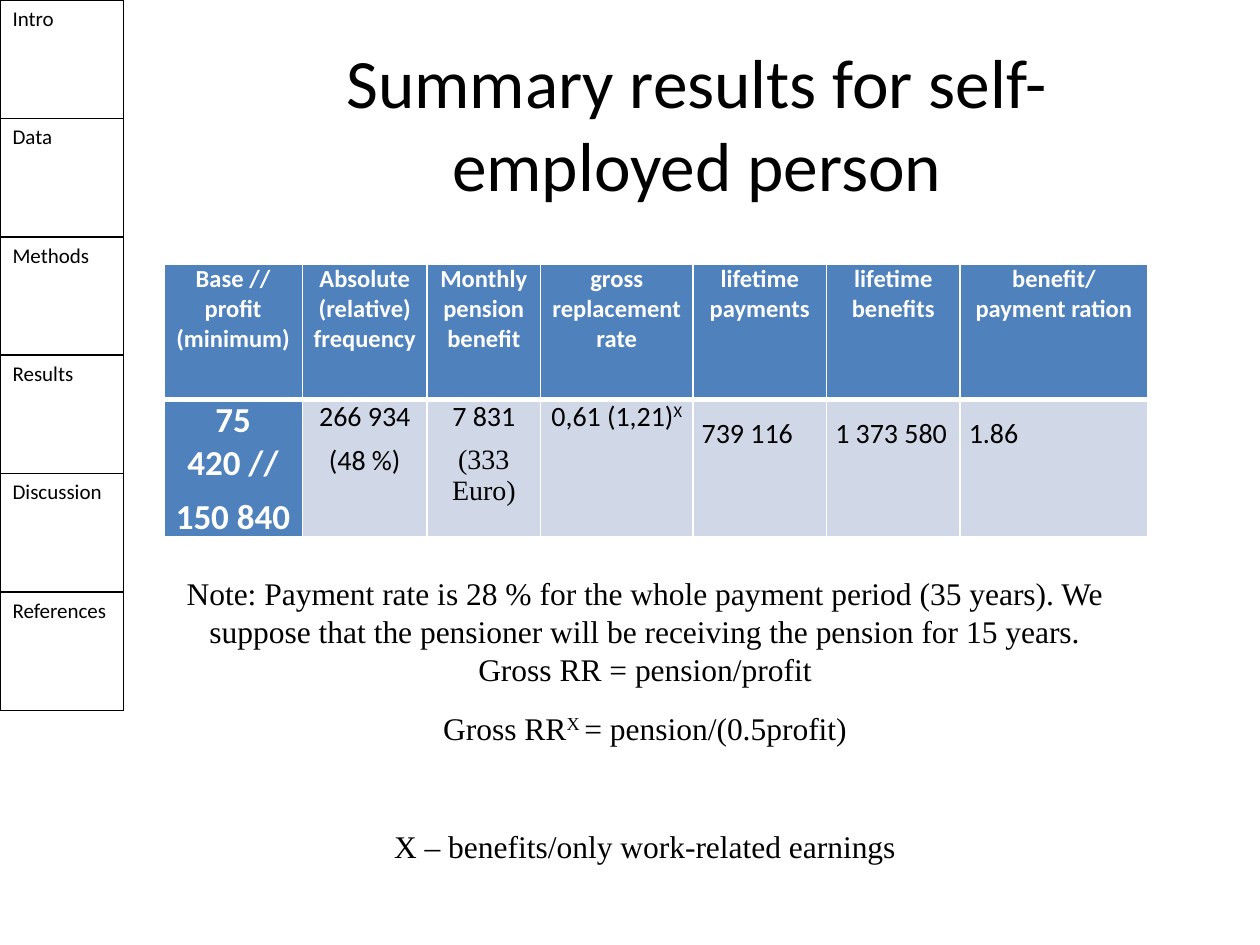
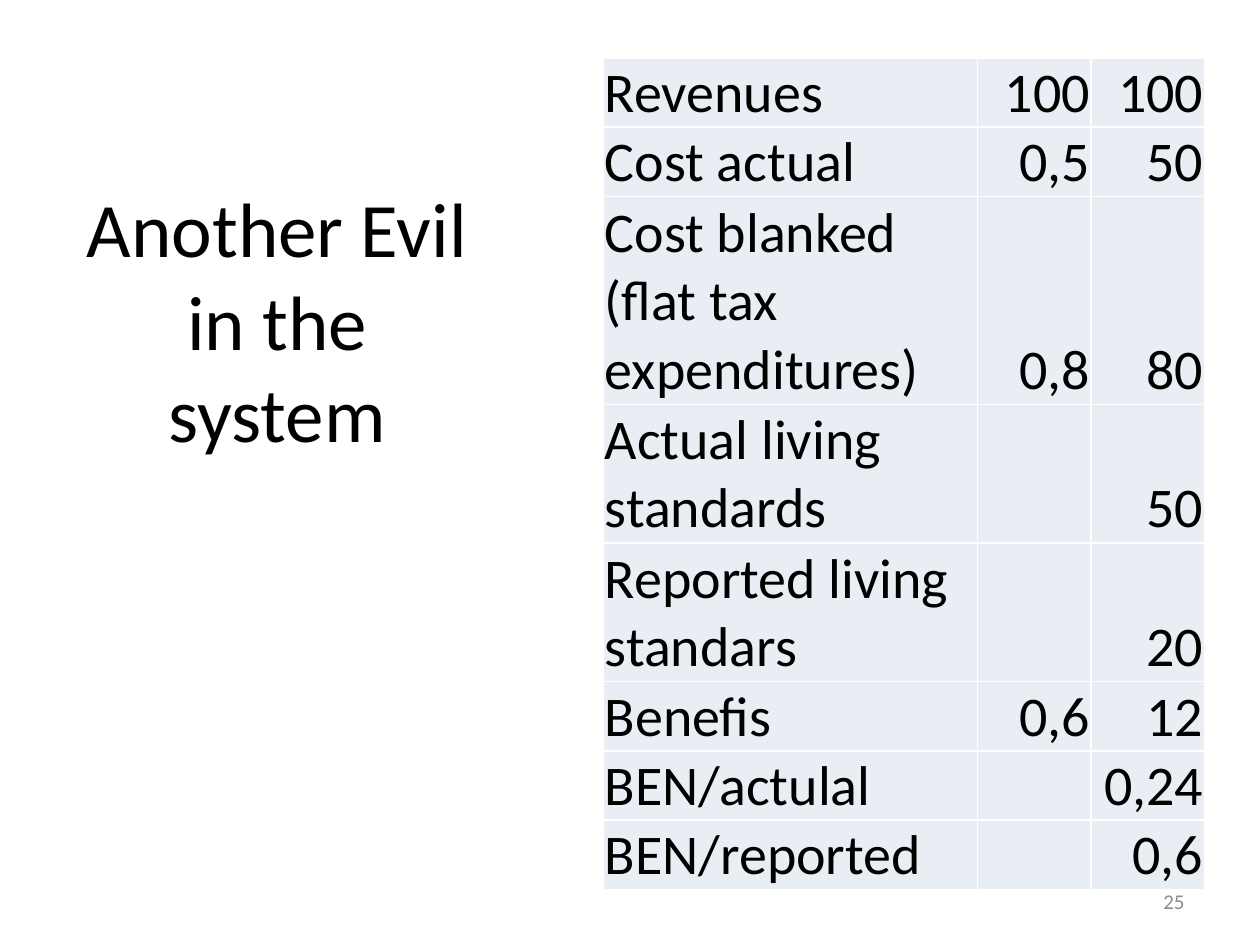
from dataclasses import dataclass

from lxml import etree
from pptx import Presentation
from pptx.dml.color import RGBColor
from pptx.enum.text import MSO_ANCHOR, PP_ALIGN
from pptx.oxml.ns import qn
from pptx.util import Inches, Pt

LEFT, CENTER, RIGHT, JUSTIFY = PP_ALIGN.LEFT, PP_ALIGN.CENTER, PP_ALIGN.RIGHT, PP_ALIGN.JUSTIFY
TOP, MIDDLE, BOTTOM = MSO_ANCHOR.TOP, MSO_ANCHOR.MIDDLE, MSO_ANCHOR.BOTTOM

# Content: text between ^ marks is superscript
SECTIONS = ["Intro", "Data", "Methods", "Results", "Discussion", "References"]
SUMMARY_TITLE = "Summary results for self-employed person"
SUMMARY_HEADERS = [
    "Base // profit (minimum)", "Absolute (relative) frequency", "Monthly pension benefit",
    "gross replacement rate", "lifetime payments", "lifetime benefits", "benefit/payment ration",
]
SUMMARY_BASE = ["75 420 //", "150 840"]
SUMMARY_CENTRED = [["266 934", "(48 %)"], ["7 831", "(333 Euro)"], ["0,61 (1,21)^X"]]
SUMMARY_TOTALS = ["739 116", "1 373 580", "1.86"]
NOTES = [
    "Note: Payment rate is 28 % for the whole payment period (35 years). We suppose that "
    "the pensioner will be receiving the pension for 15 years. Gross RR = pension/profit",
    "Gross RR^X ^= pension/(0.5profit)",
    "X – benefits/only work-related earnings",
]
EVIL_TITLE = "Another Evil in the system"
EVIL_ROWS = [  # label, rate, amount, lines of text
    ("Revenues", "100", "100", 1),
    ("Cost actual", "0,5", "50", 1),
    ("Cost blanked (flat tax expenditures)", "0,8", "80", 3),
    ("Actual living standards", "", "50", 2),
    ("Reported living standars", "", "20", 2),
    ("Benefis", "0,6", "12", 1),
    ("BEN/actulal", "", "0,24", 1),
    ("BEN/reported", "", "0,6", 1),
]
PAGE_NUMBER = "25"


@dataclass(frozen=True)
class Theme:
    sans: str = "Calibri"
    serif: str = "Times New Roman"
    black: str = "000000"
    white: str = "FFFFFF"
    grey: str = "8C8C8C"
    header: str = "4F81BD"
    body: str = "D0D8E8"
    pale: str = "E9EDF4"
    title: float = 44
    tight_title: float = 39.6
    figures: float = 32
    base: float = 20
    note: float = 18
    cell: float = 16
    heading: float = 14
    small: float = 12


THEME = Theme()
SUMMARY_INSETS = (0.07, 0, 0.07, 0)
EVIL_INSETS = (0.01, 0.01, 0.01, 0)
LINE_HEIGHT = 0.55


def write(frame, texts, size, color=THEME.black, font=THEME.sans, align=LEFT, bold=False,
          before=0, after=0, spacing=None):
    """Fill a text frame with equally styled paragraphs."""
    for index, text in enumerate(texts):
        para = frame.add_paragraph() if index else frame.paragraphs[0]
        para.alignment = align
        para.space_before, para.space_after = Pt(before), Pt(after)
        if spacing:
            para.line_spacing = spacing
        para.font.name, para.font.size, para.font.bold = font, Pt(size), bold
        para.font.color.rgb = RGBColor.from_string(color)
        for part, piece in enumerate(text.split("^")):
            if piece:
                span = para.add_run()
                span.text = piece
                if part % 2:
                    span._r.get_or_add_rPr().set("baseline", "30000")


def add_text(page, area, texts, size, anchor=TOP, **style):
    box = page.shapes.add_textbox(*map(Inches, area))
    box.text_frame.word_wrap = True
    box.text_frame.vertical_anchor = anchor
    write(box.text_frame, texts, size, **style)
    return box


def add_title(page, area, text, size=THEME.title):
    add_text(page, area, [text], size, MIDDLE, align=CENTER)


def add_grid(page, left, top, widths, heights):
    """Add an unstyled table and return it."""
    frame = page.shapes.add_table(len(heights), len(widths), Inches(left), Inches(top),
                                  Inches(sum(widths)), Inches(sum(heights)))
    table = frame.table
    table.first_row = table.horz_banding = False
    for column, width in zip(table.columns, widths):
        column.width = Inches(width)
    for row, height in zip(table.rows, heights):
        row.height = Inches(height)
    return table


def fill_cell(cell, texts, size, fill, border=THEME.white, bottom=1,
              insets=(0.1, 0.05, 0.1, 0.05), anchor=TOP, **style):
    cell.fill.solid()
    cell.fill.fore_color.rgb = RGBColor.from_string(fill)
    (cell.margin_left, cell.margin_top,
     cell.margin_right, cell.margin_bottom) = map(Inches, insets)
    cell.vertical_anchor = anchor
    write(cell.text_frame, texts, size, **style)
    properties = cell._tc.get_or_add_tcPr()
    for index, side in enumerate("LRTB"):
        width = bottom if side == "B" else 1
        line = etree.Element(qn(f"a:ln{side}"), w=str(Pt(width)))
        paint = etree.SubElement(line, qn("a:solidFill"))
        etree.SubElement(paint, qn("a:srgbClr"), val=border)
        properties.insert(index, line)


def add_sections(page):
    table = add_grid(page, 0, 0, [0.98], [0.94] * len(SECTIONS))
    for index, section in enumerate(SECTIONS):
        fill_cell(table.cell(index, 0), [section], THEME.small, THEME.white, THEME.black)


def build_summary(page):
    add_title(page, (1.69, 0.52, 7.68, 0.9), SUMMARY_TITLE, THEME.tight_title)

    # Results table
    table = add_grid(page, 1.3, 2.1, [1.1, 0.99, 0.9, 1.21, 1.06, 1.06, 1.49], [1.07, 1.09])
    centred = {"insets": SUMMARY_INSETS, "align": CENTER, "after": 6}
    strong = {"color": THEME.white, "bold": True, **centred}
    for column, header in enumerate(SUMMARY_HEADERS):
        fill_cell(table.cell(0, column), [header], THEME.heading, THEME.header,
                  bottom=3, **strong)
    fill_cell(table.cell(1, 0), SUMMARY_BASE, THEME.base, THEME.header, **strong)
    for column, texts in enumerate(SUMMARY_CENTRED, 1):
        fill_cell(table.cell(1, column), texts, THEME.cell, THEME.body, **centred)
    for column, total in enumerate(SUMMARY_TOTALS, 1 + len(SUMMARY_CENTRED)):
        fill_cell(table.cell(1, column), [total], THEME.cell, THEME.body,
                  insets=SUMMARY_INSETS, align=JUSTIFY, spacing=1.5)
    euro = table.cell(1, 2).text_frame.paragraphs[1]
    euro.font.name = THEME.serif

    add_sections(page)

    # Notes, the last one set apart
    notes = add_text(page, (1.3, 4.51, 7.64, 2.42), NOTES, THEME.note, font=THEME.serif,
                     align=CENTER, before=6, after=6)
    notes.text_frame.paragraphs[-1].space_before = Pt(40)


def build_evil(page):
    add_title(page, (0.5, 0.3, 3.4, 4.47), EVIL_TITLE)

    # Worked example
    heights = [LINE_HEIGHT * lines for *_, lines in EVIL_ROWS]
    table = add_grid(page, 4.79, 0.46, [2.97, 0.9, 0.9], heights)
    for row, (*texts, _) in enumerate(EVIL_ROWS):
        for column, text in enumerate(texts):
            fill_cell(table.cell(row, column), [text], THEME.figures, THEME.pale,
                      insets=EVIL_INSETS, anchor=BOTTOM, align=RIGHT if column else LEFT)

    add_text(page, (7.17, 6.95, 2.33, 0.4), [PAGE_NUMBER], THEME.small, MIDDLE,
             color=THEME.grey, align=RIGHT)


def main():
    deck = Presentation()
    deck.slide_width, deck.slide_height = Inches(10), Inches(7.5)
    blank = deck.slide_layouts[6]
    for build in (build_summary, build_evil):
        build(deck.slides.add_slide(blank))
    deck.save("out.pptx")


if __name__ == "__main__":
    main()
